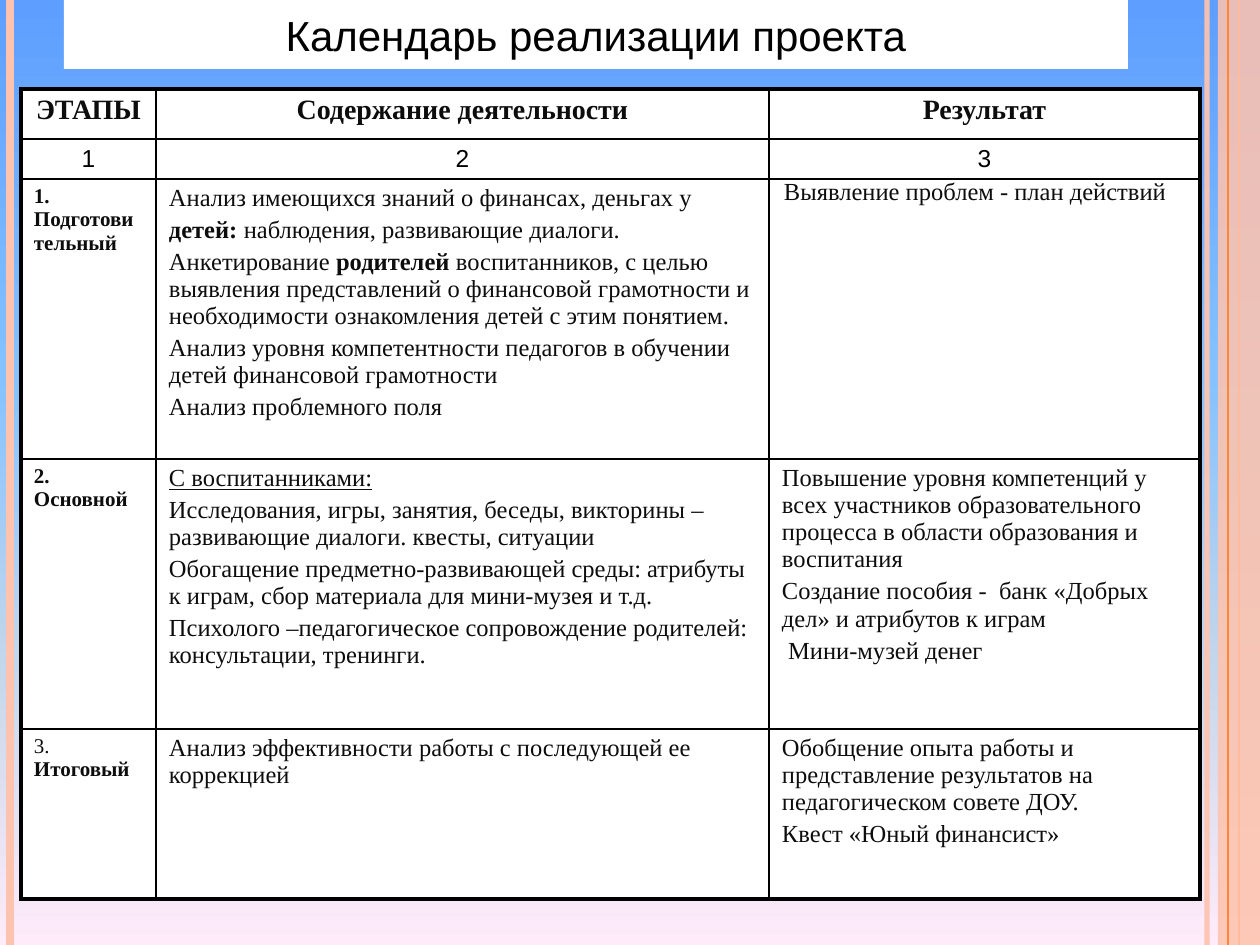
from lxml import etree
from pptx import Presentation
from pptx import util as u
from pptx.dml.color import RGBColor
from pptx.enum import shapes, text
from pptx.oxml.ns import qn

PX = 914400 // 126
SERIF, SANS = "Times New Roman", "Arial"
INK, BLACK, WHITE = "0D0D0D", "000000", "FFFFFF"
PEACH, ORANGE = "FEC3AE", "FE8637"
BOLD, PLAIN, UNDERLINED = {"bold": True}, {}, {"underline": True}

SKY = [(0, "5E9EFF"), (40, "85C2FF"), (70, "C4D6EB"), (100, "FFEBFA")]
# x, colour, width in points, opacity in percent
STRIPES = [(1207, PEACH, 3, 93), (10, PEACH, 4.5, 100), (1239, ORANGE, 1.5, 100)]
FRONT_STRIPE = (1228, ORANGE, 0.75, 100)
SIDE_BAND = (1218, 0, 42, 945)

TITLE = "Календарь реализации проекта"
TITLE_AT = (64, 0, 1064, 69)
TABLE_AT = (21, 89)
COLUMNS = [135, 613, 431]
ROWS = [50, 40, 280, 270, 170]

# A cell is a list of paragraphs; a paragraph is a string or a list of (text, format).
CELLS = [
    [["ЭТАПЫ"], ["Содержание деятельности"], ["Результат"]],
    [["1"], ["2"], ["3"]],
    [
        [[("1. Подготовительный", BOLD)]],
        [
            "Анализ имеющихся знаний о финансах, деньгах у",
            [("детей: ", BOLD), ("наблюдения, развивающие диалоги.", PLAIN)],
            [("Анкетирование ", PLAIN), ("родителей", BOLD),
             (" воспитанников, с целью выявления представлений о финансовой грамотности "
              "и необходимости ознакомления детей с этим понятием.", PLAIN)],
            "Анализ уровня компетентности педагогов в обучении детей финансовой грамотности",
            "Анализ проблемного поля",
        ],
        ["Выявление проблем - план действий"],
    ],
    [
        [[("2. Основной", BOLD)]],
        [
            [("С воспитанниками:", UNDERLINED)],
            "Исследования, игры, занятия, беседы, викторины –развивающие диалоги. "
            "квесты, ситуации",
            "Обогащение предметно-развивающей среды: атрибуты к играм, сбор материала "
            "для мини-музея и т.д.",
            "Психолого –педагогическое сопровождение родителей: консультации, тренинги.",
        ],
        [
            "Повышение уровня компетенций у всех участников образовательного процесса "
            "в области образования и воспитания",
            "Создание пособия -  банк «Добрых дел» и атрибутов к играм",
            " Мини-музей денег",
        ],
    ],
    [
        [[("3. ", PLAIN), ("Итоговый", BOLD)]],
        ["Анализ эффективности работы с последующей ее коррекцией"],
        [
            "Обобщение опыта работы и представление результатов на педагогическом совете ДОУ.",
            "Квест «Юный финансист»",
        ],
    ],
]
HEADER = dict(size=16, bold=True, align=text.PP_ALIGN.CENTER)
NUMBERS = dict(size=14, font=SANS, color=BLACK, align=text.PP_ALIGN.CENTER)
STAGE = dict(size=12)
BODY = dict(size=14)
UNPADDED = (2, 2)  # the one cell without top and bottom margins


def px(*values):
    return [u.Emu(value * PX) for value in values]


def rgb(color):
    return RGBColor.from_string(color)


def set_opacity(fill_parent, percent):
    for color in fill_parent.iter(qn("a:srgbClr")):
        etree.SubElement(color, qn("a:alpha")).set("val", str(percent * 1000))


def write(frame, paragraphs, size=14, font=SERIF, color=INK, bold=False,
          align=text.PP_ALIGN.LEFT):
    for index, spans in enumerate(paragraphs):
        para = frame.add_paragraph() if index else frame.paragraphs[0]
        para.alignment = align
        para.space_before = u.Pt(0.2 * size if index else 0)
        if isinstance(spans, str):
            spans = [(spans, PLAIN)]
        for words, style in spans:
            span = para.add_run()
            span.text = words
            span.font.size, span.font.name = u.Pt(size), font
            span.font.color.rgb = rgb(color)
            span.font.bold = style.get("bold", bold)
            span.font.underline = style.get("underline", False)


def paint_background(page):
    fill = page.background.fill
    fill.gradient()
    fill.gradient_angle = 270
    stops = page.background._cSld.find(".//" + qn("a:gsLst"))
    for stop in list(stops):
        stops.remove(stop)
    for position, color in SKY:
        stop = etree.SubElement(stops, qn("a:gs"), pos=str(position * 1000))
        etree.SubElement(stop, qn("a:srgbClr"), val=color)


def add_stripe(page, x, color, width, opacity):
    stripe = page.shapes.add_connector(shapes.MSO_CONNECTOR.STRAIGHT, *px(x, 0, x, 945))
    stripe.line.color.rgb = rgb(color)
    stripe.line.width = u.Pt(width)
    properties = stripe._element.spPr
    if opacity < 100:
        set_opacity(properties, opacity)
    etree.SubElement(properties, qn("a:effectLst"))


def add_side_band(page):
    band = page.shapes.add_shape(shapes.MSO_SHAPE.RECTANGLE, *px(*SIDE_BAND))
    band.shadow.inherit = False
    band.fill.solid()
    band.fill.fore_color.rgb = rgb(PEACH)
    set_opacity(band._element.spPr, 87)
    band.line.fill.background()


def add_title(page):
    title = page.shapes.title
    title.left, title.top, title.width, title.height = px(*TITLE_AT)
    title.fill.solid()
    title.fill.fore_color.rgb = rgb(WHITE)
    title.text_frame.vertical_anchor = text.MSO_ANCHOR.MIDDLE
    write(title.text_frame, [TITLE], size=24, font=SANS, color=BLACK,
          align=text.PP_ALIGN.CENTER)


def set_borders(cell, row, column):
    """Thick on the outer edge of the table, thin inside."""
    outer = {"lnL": column == 0, "lnR": column == len(COLUMNS) - 1,
             "lnT": row == 0, "lnB": row == len(ROWS) - 1}
    properties = cell._tc.get_or_add_tcPr()
    for side, is_outer in outer.items():
        width = u.Pt(2.25 if is_outer else 1)
        line = etree.SubElement(properties, qn("a:" + side), w=str(width))
        fill = etree.SubElement(line, qn("a:solidFill"))
        etree.SubElement(fill, qn("a:srgbClr"), val=BLACK)


def add_calendar(page):
    frame = page.shapes.add_table(len(ROWS), len(COLUMNS), *px(*TABLE_AT),
                                  *px(sum(COLUMNS), sum(ROWS)))
    table = frame.table
    table.first_row = table.horz_banding = False
    for column, width in zip(table.columns, px(*COLUMNS)):
        column.width = width
    for row, height in zip(table.rows, px(*ROWS)):
        row.height = height
    for r, contents in enumerate(CELLS):
        for c, paragraphs in enumerate(contents):
            cell = table.cell(r, c)
            side, end = (15, 0) if (r, c) == UNPADDED else (13, 6)
            cell.margin_left, cell.margin_right = px(side, side)
            cell.margin_top, cell.margin_bottom = px(end, end)
            set_borders(cell, r, c)
            cell.fill.solid()
            cell.fill.fore_color.rgb = rgb(WHITE)
            style = (HEADER, NUMBERS)[r] if r < 2 else BODY if c else STAGE
            write(cell.text_frame, paragraphs, **style)


def main():
    deck = Presentation()
    deck.slide_width, deck.slide_height = px(1260, 945)
    page = deck.slides.add_slide(deck.slide_layouts.get_by_name("Title Only"))
    paint_background(page)
    for stripe in STRIPES:
        add_stripe(page, *stripe)
    add_side_band(page)
    add_stripe(page, *FRONT_STRIPE)
    add_title(page)
    add_calendar(page)
    deck.save("out.pptx")


if __name__ == "__main__":
    main()
